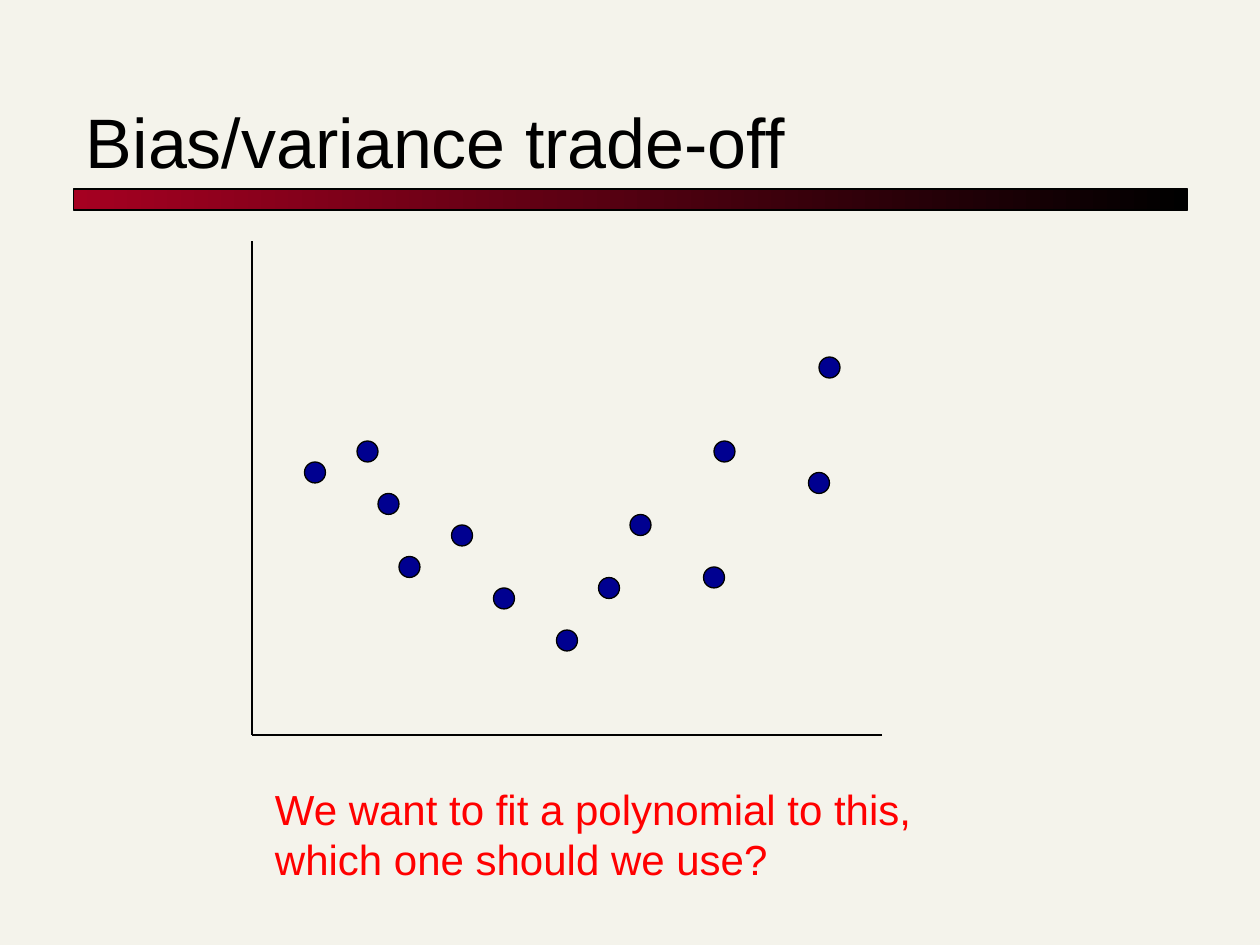
from dataclasses import dataclass

from lxml import etree
from pptx import Presentation
from pptx import util as u
from pptx.dml.color import RGBColor
from pptx.enum import shapes, text
from pptx.oxml import ns

COLOURS = {
    "background": "F4F3EB",
    "ink": "000000",
    "crimson": "A50021",
    "dot": "000090",
    "question": "FF0000",
}
DOT_SIZE = 12
LINE_WIDTH = 0.75


@dataclass(frozen=True)
class Frame:
    left: float
    top: float
    width: float
    height: float

    def lengths(self) -> list:
        return [u.Pt(v) for v in (self.left, self.top, self.width, self.height)]


@dataclass(frozen=True)
class Label:
    words: str
    frame: Frame
    size: float
    colour: str
    anchor: text.MSO_ANCHOR


@dataclass(frozen=True)
class Axis:
    start: tuple[float, float]
    end: tuple[float, float]


@dataclass(frozen=True)
class Dot:
    left: float
    top: float


LABELS = [
    Label("Bias/variance trade-off", Frame(42, 30, 636, 78), 40, "ink",
          text.MSO_ANCHOR.BOTTOM),
    Label("We want to fit a polynomial to this, which one should we use?",
          Frame(150, 444, 384, 65.5), 24, "question", text.MSO_ANCHOR.TOP),
]
AXES = [Axis((144, 138), (144, 420)), Axis((504, 420), (144, 420))]
DOTS = [
    Dot(174, 264), Dot(204, 252), Dot(216, 282), Dot(228, 318), Dot(258, 300),
    Dot(282, 336), Dot(318, 360), Dot(342, 330), Dot(360, 294), Dot(402, 324),
    Dot(408, 252), Dot(462, 270), Dot(468, 204),
]


def rgb(name: str) -> RGBColor:
    return RGBColor.from_string(COLOURS[name])


def apply_format(target, values: dict) -> None:
    for name, value in values.items():
        setattr(target, name, value)


def outline(line) -> None:
    line.color.rgb = rgb("ink")
    line.width = u.Pt(LINE_WIDTH)


def add_outlined(page, kind: shapes.MSO_SHAPE, frame: Frame):
    shape = page.shapes.add_shape(kind, *frame.lengths())
    shape.shadow.inherit = False
    outline(shape.line)
    return shape


def draw_title_bar(page, frame: Frame) -> None:
    bar = add_outlined(page, shapes.MSO_SHAPE.RECTANGLE, frame)
    bar.fill.gradient()
    bar.fill.gradient_angle = 0
    for stop, colour, position in zip(bar.fill.gradient_stops, ("crimson", "ink"), (0, 1)):
        stop.color.rgb = rgb(colour)
        stop.position = position


def draw_label(page, label: Label) -> None:
    box = page.shapes.add_textbox(*label.frame.lengths())
    apply_format(box.text_frame, {"word_wrap": True, "vertical_anchor": label.anchor})
    para = box.text_frame.paragraphs[0]
    span = para.add_run()
    span.text = label.words
    apply_format(span.font, {"name": "Arial", "size": u.Pt(label.size)})
    span.font.color.rgb = rgb(label.colour)


def draw_axis(page, axis: Axis) -> None:
    ends = [u.Pt(v) for v in axis.start + axis.end]
    connector = page.shapes.add_connector(shapes.MSO_CONNECTOR.STRAIGHT, *ends)
    outline(connector.line)
    etree.SubElement(connector.element.spPr, ns.qn("a:effectLst"))


def draw_dot(page, dot: Dot) -> None:
    frame = Frame(dot.left, dot.top, DOT_SIZE, DOT_SIZE)
    circle = add_outlined(page, shapes.MSO_SHAPE.OVAL, frame)
    circle.fill.solid()
    circle.fill.fore_color.rgb = rgb("dot")


def main() -> None:
    deck = Presentation()
    apply_format(deck, {"slide_width": u.Pt(720), "slide_height": u.Pt(540)})
    page = deck.slides.add_slide(deck.slide_layouts[6])
    page.background.fill.solid()
    page.background.fill.fore_color.rgb = rgb("background")

    draw_title_bar(page, Frame(42, 108, 636.5, 12))
    for axis in AXES:
        draw_axis(page, axis)
    for dot in DOTS:
        draw_dot(page, dot)
    for label in LABELS:
        draw_label(page, label)
    deck.save("out.pptx")


if __name__ == "__main__":
    main()
